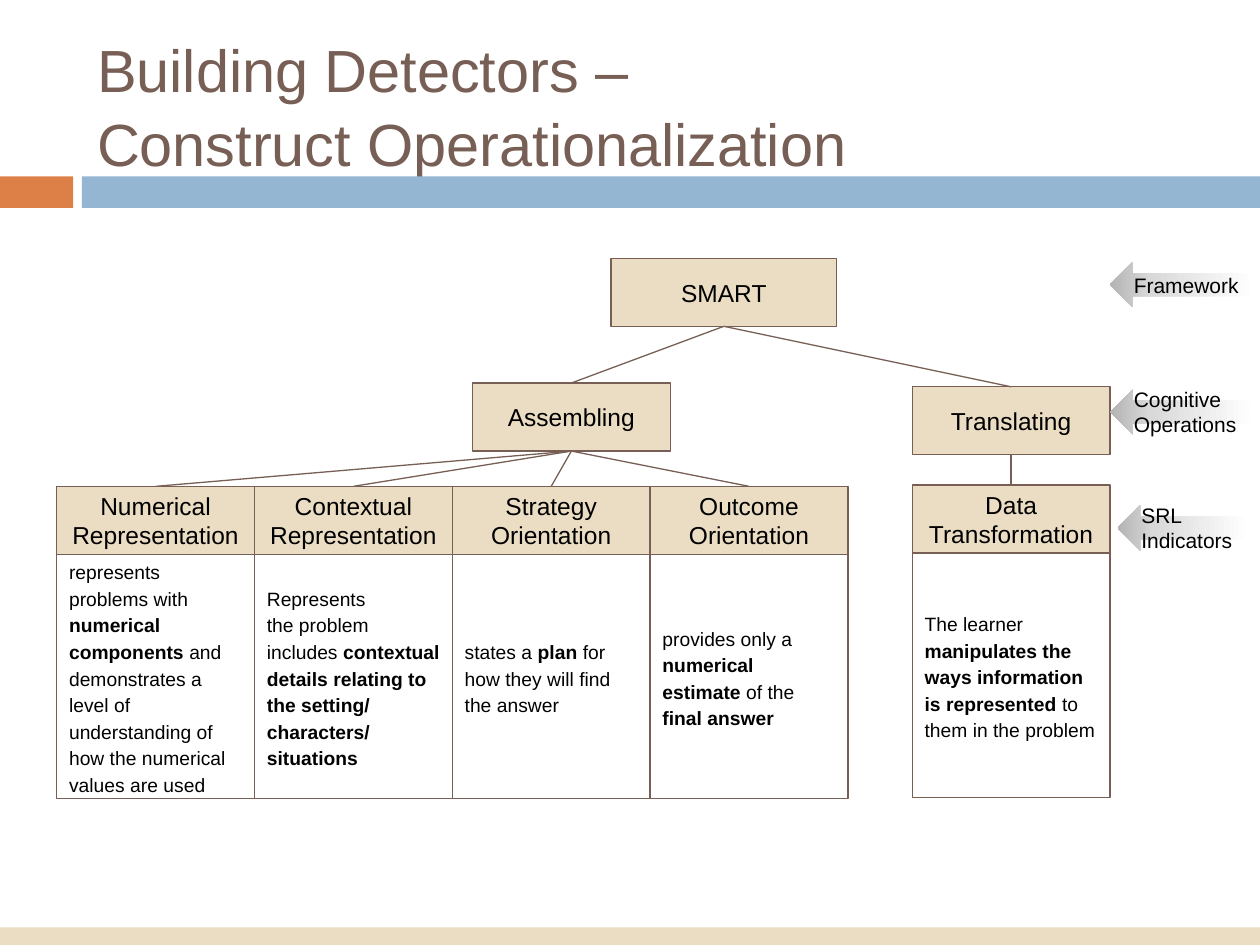
from lxml.etree import SubElement
from pptx import Presentation
from pptx.dml.color import RGBColor
from pptx.enum.shapes import MSO_CONNECTOR as CONN, MSO_SHAPE as SHAPE
from pptx.enum.text import MSO_ANCHOR as ANCHOR, PP_ALIGN as ALIGN
from pptx.oxml import parse_xml
from pptx.oxml.ns import nsdecls, qn
from pptx.util import Inches, Pt

W, H = 10, 7.5
COL, HEAD, BODY = 1.57, 0.54, 1.94
BROWN, TAN, WHITE, BLACK = "775F55", "EBDDC3", "FFFFFF", "000000"
TOP, BOTTOM = 0, 2
STOPS = [(0, "FFFFFF"), (72, "D9D9D9"), (100, "B3B3B3")]

ASSEMBLING = [
    ("Numerical Representation",
     ["represents problems with *numerical components *and demonstrates a level of "
      "understanding of how the numerical values are used"]),
    ("Contextual Representation",
     ["Represents",
      "the problem includes *contextual details relating to the setting/ characters/ situations"]),
    ("Strategy Orientation",
     ["states a *plan* for how they will find the answer"]),
    ("Outcome Orientation",
     ["provides only a *numerical estimate* of the *final answer"]),
]
TRANSLATING = [
    ("Data Transformation",
     ["The learner *manipulates the ways information is represented* to them in the problem"]),
]
LEVELS = [
    ("Framework", (8.81, 2.08, 1.15, 0.36)),
    ("Cognitive Operations", (8.81, 3.09, 1.15, 0.36)),
    ("SRL Indicators", (8.87, 4.01, 1.04, 0.36)),
]


def rgb(value):
    """Turn a hex string into a colour."""
    return RGBColor.from_string(value)


def add_box(s, box, fill=None, line=None, kind=SHAPE.RECTANGLE):
    """Add a flat shape with optional solid fill and thin outline."""
    sp = s.shapes.add_shape(kind, *map(Inches, box))
    sp.shadow.inherit = False
    if fill:
        sp.fill.solid()
        sp.fill.fore_color.rgb = rgb(fill)
    if line:
        sp.line.color.rgb = rgb(line)
        sp.line.width = Pt(0.75)
    else:
        sp.line.fill.background()
    return sp


def write(sp, paragraphs, size, align=ALIGN.LEFT, color=BLACK, spacing=None, anchor=ANCHOR.MIDDLE):
    """Fill a shape with text, where asterisks switch bold on and off."""
    tf = sp.text_frame
    tf.word_wrap = True
    tf.vertical_anchor = anchor
    tf.margin_left = tf.margin_right = tf.margin_top = tf.margin_bottom = Inches(0.1)
    for i, text in enumerate(paragraphs):
        p = tf.paragraphs[0] if i == 0 else tf.add_paragraph()
        p.alignment = align
        p.line_spacing = spacing
        if "*" in text:
            for k, part in enumerate(text.split("*")):
                r = p.add_run()
                r.text = part
                r.font.bold = k % 2 == 1
        else:
            p.text = text
        for r in p.runs:
            r.font.name = "Arial"
            r.font.size = Pt(size)
            r.font.color.rgb = rgb(color)


def add_node(s, text, x, y, width=COL):
    """Add a tan heading box of the tree."""
    sp = add_box(s, (x, y, width, HEAD), TAN, BROWN)
    write(sp, [text], 14, ALIGN.CENTER)
    return sp


def link(s, parent, child):
    """Join the bottom of a parent to the top of a child."""
    c = s.shapes.add_connector(CONN.STRAIGHT, 0, 0, 0, 0)
    c.begin_connect(parent, BOTTOM)
    c.end_connect(child, TOP)
    c.line.color.rgb = rgb(BROWN)
    c.line.width = Pt(0.75)
    SubElement(c._element.spPr, qn("a:effectLst"))


def add_branch(s, parent, indicators, x, y):
    """Place indicator columns side by side below their parent node."""
    for i, (name, description) in enumerate(indicators):
        left = x + i * COL
        body = add_box(s, (left, y + HEAD, COL, BODY), WHITE, BROWN)
        write(body, description, 11, spacing=1.15)
        link(s, parent, add_node(s, name, left, y))


def add_tree(s):
    """Build the framework, its operations and their indicators."""
    root = add_node(s, "SMART", 4.85, 2.05, 1.79)
    assembling = add_node(s, "Assembling", 3.75, 3.04)
    translating = add_node(s, "Translating", 7.24, 3.07)
    for operation in (assembling, translating):
        link(s, root, operation)
    add_branch(s, assembling, ASSEMBLING, 0.45, 3.86)
    add_branch(s, translating, TRANSLATING, 7.24, 3.85)


def add_level(s, text, box):
    """Add a fading left arrow that names a level of the tree."""
    sp = add_box(s, box, kind=SHAPE.LEFT_ARROW)
    stops = "".join(f'<a:gs pos="{pos * 1000}"><a:srgbClr val="{color}"/></a:gs>'
                    for pos, color in STOPS)
    gradient = parse_xml(f'<a:gradFill {nsdecls("a")}><a:gsLst>{stops}</a:gsLst>'
                         '<a:lin ang="10800000" scaled="0"/></a:gradFill>')
    sp._element.spPr.find(qn("a:prstGeom")).addnext(gradient)
    write(sp, [text], 12)


def add_frame(s):
    """Draw the coloured bands and set the title."""
    add_box(s, (0, 1.4, 0.58, 0.25), "DD8047")
    add_box(s, (0.65, 1.4, W - 0.65, 0.25), "94B6D2")
    add_box(s, (0, H - 0.14, W, 0.14), TAN)
    title = s.shapes.title
    title.left, title.top, title.width, title.height = map(Inches, (0.67, 0.17, 9, 1.25))
    write(title, ["Building Detectors – \vConstruct Operationalization"], 34,
          color=BROWN, spacing=1.04, anchor=ANCHOR.BOTTOM)
    title.text_frame.margin_bottom = 0


def main():
    """Build and save the slide."""
    prs = Presentation()
    prs.slide_width, prs.slide_height = Inches(W), Inches(H)
    s = prs.slides.add_slide(prs.slide_layouts[5])
    add_frame(s)
    add_tree(s)
    for text, box in LEVELS:
        add_level(s, text, box)
    prs.save("out.pptx")


if __name__ == "__main__":
    main()
